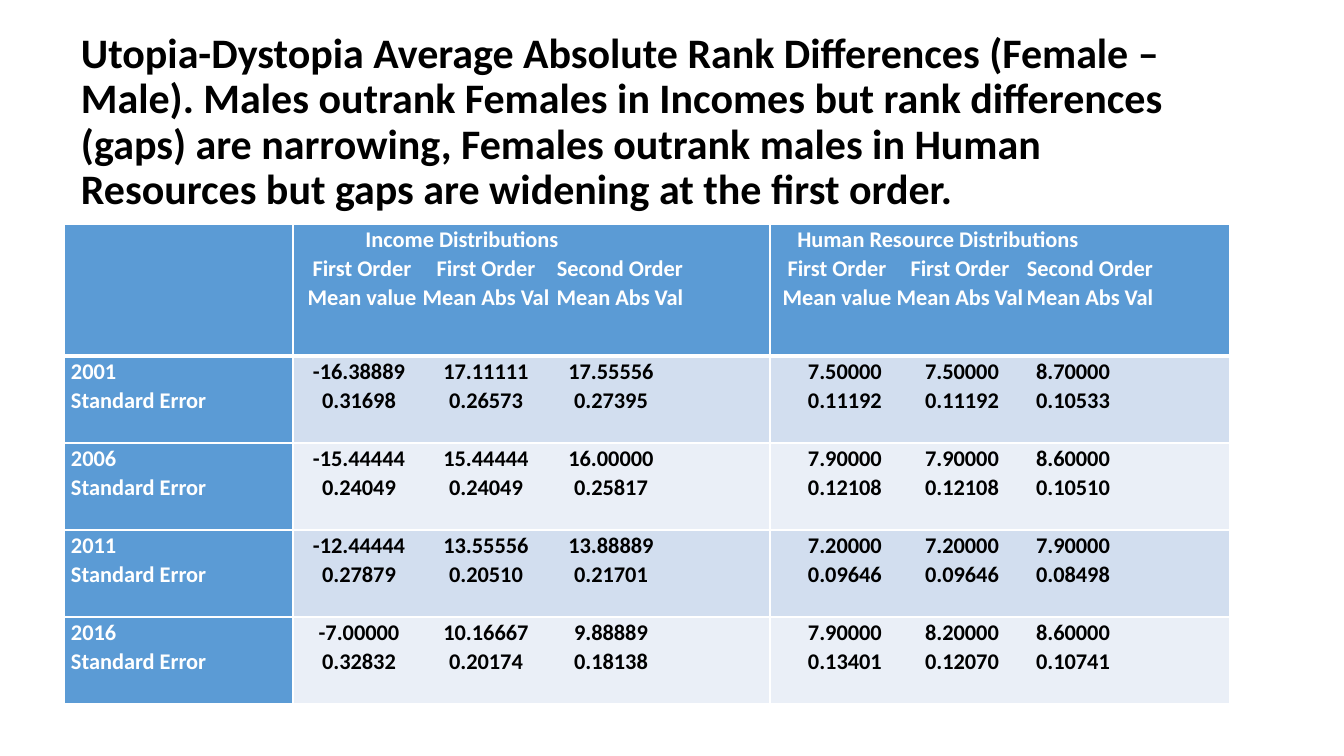
from lxml.etree import SubElement
from pptx import Presentation
from pptx.dml.color import RGBColor
from pptx.enum.text import MSO_ANCHOR as Anchor
from pptx.oxml import parse_xml
from pptx.oxml.ns import nsdecls, qn
from pptx.util import Pt

COLORS = {
    "black": "000000",
    "white": "FFFFFF",
    "blue": "5B9BD5",
    "band": "D2DEEF",
    "light": "EAEFF7",
}
FONT = "Calibri"
TITLE = (
    "Utopia-Dystopia Average Absolute Rank Differences (Female – Male). "
    "Males outrank Females in Incomes but rank differences (gaps) are narrowing, "
    "Females outrank males in Human Resources but gaps are widening at the first order."
)
COLUMNS = [229, 477, 460]
HEADER_HEIGHT, ROW_HEIGHT = 132, 87
ORDERS = ["First Order", "First Order", "Second Order"]
MEASURES = ["Mean value", "Mean Abs Val", "Mean Abs Val"]
GROUPS = [
    {"name": "Income Distributions", "name_stop": [162],
     "head_stops": [62, 186, 320], "value_stops": [59, 186, 311]},
    {"name": "Human Resource Distributions", "name_stop": [161],
     "head_stops": [60, 183, 313], "value_stops": [68, 185, 296]},
]
YEARS = {
    "2001": [("-16.38889 17.11111 17.55556", "0.31698 0.26573 0.27395"),
             ("7.50000 7.50000 8.70000", "0.11192 0.11192 0.10533")],
    "2006": [("-15.44444 15.44444 16.00000", "0.24049 0.24049 0.25817"),
             ("7.90000 7.90000 8.60000", "0.12108 0.12108 0.10510")],
    "2011": [("-12.44444 13.55556 13.88889", "0.27879 0.20510 0.21701"),
             ("7.20000 7.20000 7.90000", "0.09646 0.09646 0.08498")],
    "2016": [("-7.00000 10.16667 9.88889", "0.32832 0.20174 0.18138"),
             ("7.90000 8.20000 8.60000", "0.13401 0.12070 0.10741")],
}


def px(n):
    return round(n * 914400 / 100.8)


def rgb(name):
    return RGBColor.from_string(COLORS[name])


def write(p, text, size=16, color="black", spacing=1.07, stops=()):
    p.line_spacing = spacing
    if stops:
        tabs = SubElement(p._p.get_or_add_pPr(), qn("a:tabLst"))
        for stop in stops:
            SubElement(tabs, qn("a:tab"), pos=str(px(stop)), algn="ctr")
    r = p.add_run()
    r.text = text
    r.font.name = FONT
    r.font.size = Pt(size)
    r.font.bold = True
    r.font.color.rgb = rgb(color)


def add_title(s):
    tf = s.shapes.add_textbox(px(71), px(50), px(1159), px(146)).text_frame
    tf.word_wrap = True
    tf.vertical_anchor = Anchor.MIDDLE
    write(tf.paragraphs[0], TITLE, size=30, spacing=0.9)


def set_borders(cell, top, bottom):
    widths = {"lnL": 1, "lnR": 1, "lnT": top, "lnB": bottom}
    tc_pr = cell._tc.get_or_add_tcPr()
    for i, (side, width) in enumerate(widths.items()):
        tc_pr.insert(i, parse_xml(
            f'<a:{side} {nsdecls("a")} w="{Pt(width)}"><a:solidFill>'
            f'<a:srgbClr val="{COLORS["white"]}"/></a:solidFill></a:{side}>'))


def fill_cell(cell, lines, fill, color, top=1, bottom=1):
    cell.margin_left = cell.margin_right = px(7)
    cell.margin_top = cell.margin_bottom = 0
    cell.fill.solid()
    cell.fill.fore_color.rgb = rgb(fill)
    set_borders(cell, top, bottom)
    tf = cell.text_frame
    for i, (text, stops) in enumerate(lines):
        p = tf.add_paragraph() if i else tf.paragraphs[0]
        write(p, text, color=color, stops=stops)


def tabbed(words):
    return "".join("\t" + word for word in words)


def add_rank_table(s):
    height = HEADER_HEIGHT + ROW_HEIGHT * len(YEARS)
    table = s.shapes.add_table(len(YEARS) + 1, len(COLUMNS), px(64), px(224),
                               px(sum(COLUMNS)), px(height)).table
    for column, width in zip(table.columns, COLUMNS):
        column.width = px(width)
    for i, row in enumerate(table.rows):
        row.height = px(ROW_HEIGHT if i else HEADER_HEIGHT)

    fill_cell(table.cell(0, 0), [], "blue", "white", bottom=3)
    for j, group in enumerate(GROUPS, 1):
        lines = [(tabbed([group["name"]]), group["name_stop"]),
                 (tabbed(ORDERS), group["head_stops"]),
                 (tabbed(MEASURES), group["head_stops"])]
        fill_cell(table.cell(0, j), lines, "blue", "white", bottom=3)

    for i, (year, results) in enumerate(YEARS.items(), 1):
        top = 3 if i == 1 else 1
        band = "band" if i % 2 else "light"
        fill_cell(table.cell(i, 0), [(year, ()), ("Standard Error", ())],
                  "blue", "white", top=top)
        for j, (group, values) in enumerate(zip(GROUPS, results), 1):
            lines = [(tabbed(v.split()), group["value_stops"]) for v in values]
            fill_cell(table.cell(i, j), lines, band, "black", top=top)


def main():
    prs = Presentation()
    prs.slide_width, prs.slide_height = px(1344), px(756)
    s = prs.slides.add_slide(prs.slide_layouts[6])
    add_title(s)
    add_rank_table(s)
    prs.save("out.pptx")


if __name__ == "__main__":
    main()
